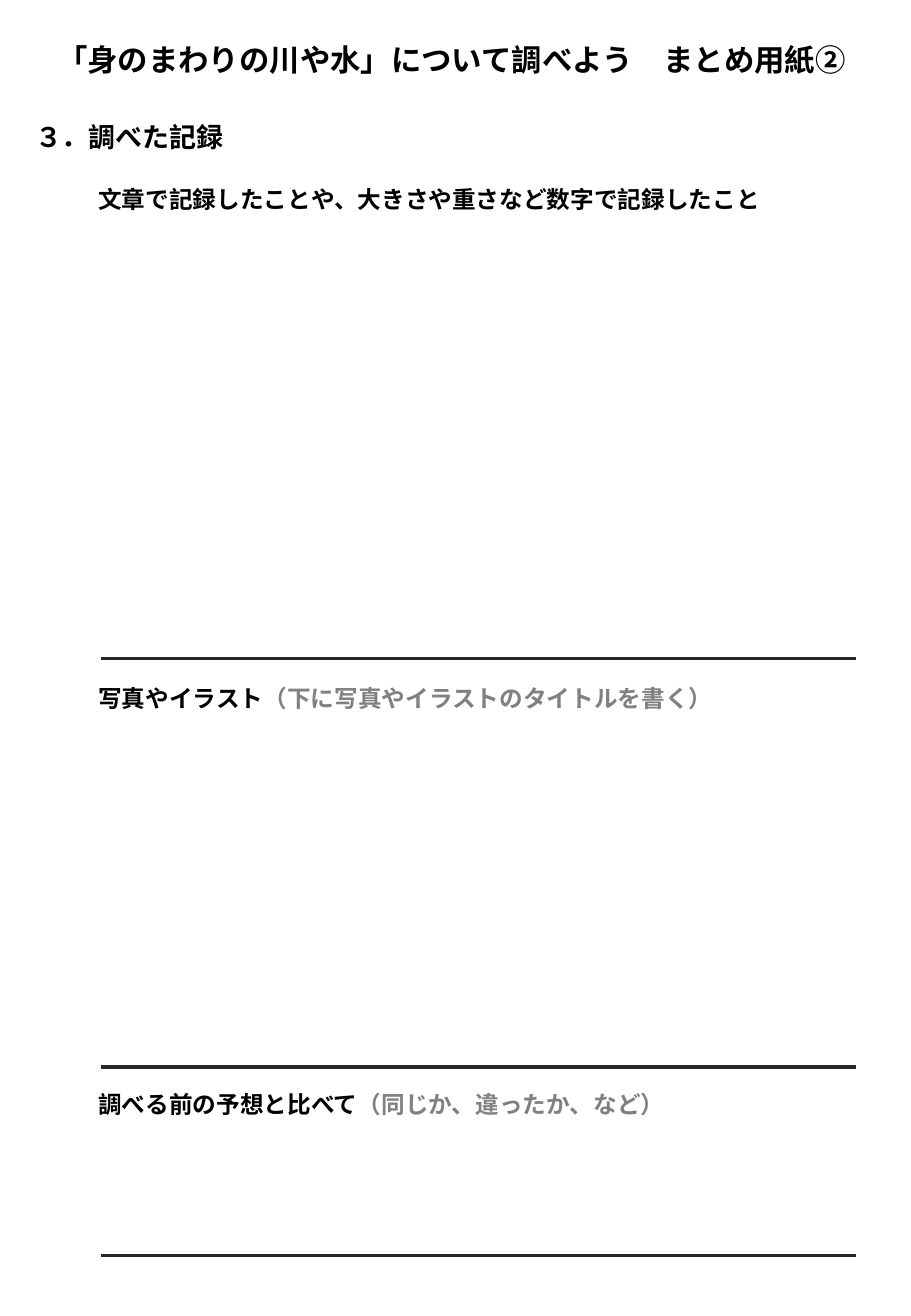
import dataclasses

import lxml.etree
import pptx
import pptx.dml.color
import pptx.enum.shapes
import pptx.enum.text
import pptx.oxml.ns
import pptx.shapes.base
import pptx.slide
import pptx.util

Inches = pptx.util.Inches
FONT = "Noto Sans CJK JP"
BLACK, GRAY, RULE_COLOR = "000000", "808080", "262626"
SECTION_LEFT, RULE_LEFT, RULE_RIGHT = 0.71, 0.83, 7.05


@dataclasses.dataclass(frozen=True)
class Label:
    left: float
    top: float
    width: float
    height: float
    size: int
    text: str
    hint: str = ""


@dataclasses.dataclass(frozen=True)
class Section:
    """A heading with writing space below it, closed by a rule."""
    top: float
    width: float
    rule_y: float
    heading: str
    hint: str = ""


TITLE = Label(0.37, 0.29, 6.77, 0.4, 18, "「身のまわりの川や水」について調べよう　まとめ用紙②")
CHAPTER = Label(0.19, 0.94, 1.77, 0.37, 16, "３．調べた記録")
SECTIONS = [
    Section(1.47, 5.7, 5.42, "文章で記録したことや、大きさや重さなど数字で記録したこと"),
    Section(5.58, 5.31, 8.78, "写真やイラスト", "（下に写真やイラストのタイトルを書く）"),
    Section(8.92, 4.91, 10.33, "調べる前の予想と比べて", "（同じか、違ったか、など）"),
]


def rgb(color: str) -> pptx.dml.color.RGBColor:
    return pptx.dml.color.RGBColor.from_string(color)


def write_label(box: pptx.shapes.base.BaseShape, label: Label) -> None:
    box.left, box.top = Inches(label.left), Inches(label.top)
    box.width, box.height = Inches(label.width), Inches(label.height)
    frame = box.text_frame
    frame.word_wrap = False
    frame.auto_size = pptx.enum.text.MSO_AUTO_SIZE.SHAPE_TO_FIT_TEXT
    frame.vertical_anchor = pptx.enum.text.MSO_ANCHOR.TOP
    para = frame.paragraphs[0]
    para.alignment = pptx.enum.text.PP_ALIGN.LEFT
    para.font.name = FONT
    para.font.size = pptx.util.Pt(label.size)
    para.font.bold = True
    # Japanese characters take their typeface from a:ea
    defaults = para._p.pPr.find(pptx.oxml.ns.qn("a:defRPr"))
    lxml.etree.SubElement(defaults, pptx.oxml.ns.qn("a:ea"), typeface=FONT)
    for text, color in ((label.text, BLACK), (label.hint, GRAY)):
        if text:
            span = para.add_run()
            span.text = text
            span.font.color.rgb = rgb(color)


def add_label(page: pptx.slide.Slide, label: Label) -> None:
    write_label(page.shapes.add_textbox(0, 0, 0, 0), label)


def add_rule(page: pptx.slide.Slide, y: float) -> None:
    rule = page.shapes.add_connector(
        pptx.enum.shapes.MSO_CONNECTOR.STRAIGHT,
        Inches(RULE_LEFT), Inches(y), Inches(RULE_RIGHT), Inches(y))
    rule.line.color.rgb = rgb(RULE_COLOR)
    rule.line.width = pptx.util.Pt(2)
    lxml.etree.SubElement(rule._element.spPr, pptx.oxml.ns.qn("a:effectLst"))


def main() -> None:
    deck = pptx.Presentation()
    deck.slide_width, deck.slide_height = Inches(7.5), Inches(10.83)
    page = deck.slides.add_slide(deck.slide_layouts.get_by_name("Title Only"))
    write_label(page.shapes.title, TITLE)
    add_label(page, CHAPTER)
    for section in SECTIONS:
        add_label(page, Label(SECTION_LEFT, section.top, section.width, 0.34, 14,
                              section.heading, section.hint))
        add_rule(page, section.rule_y)
    deck.save("out.pptx")


if __name__ == "__main__":
    main()
